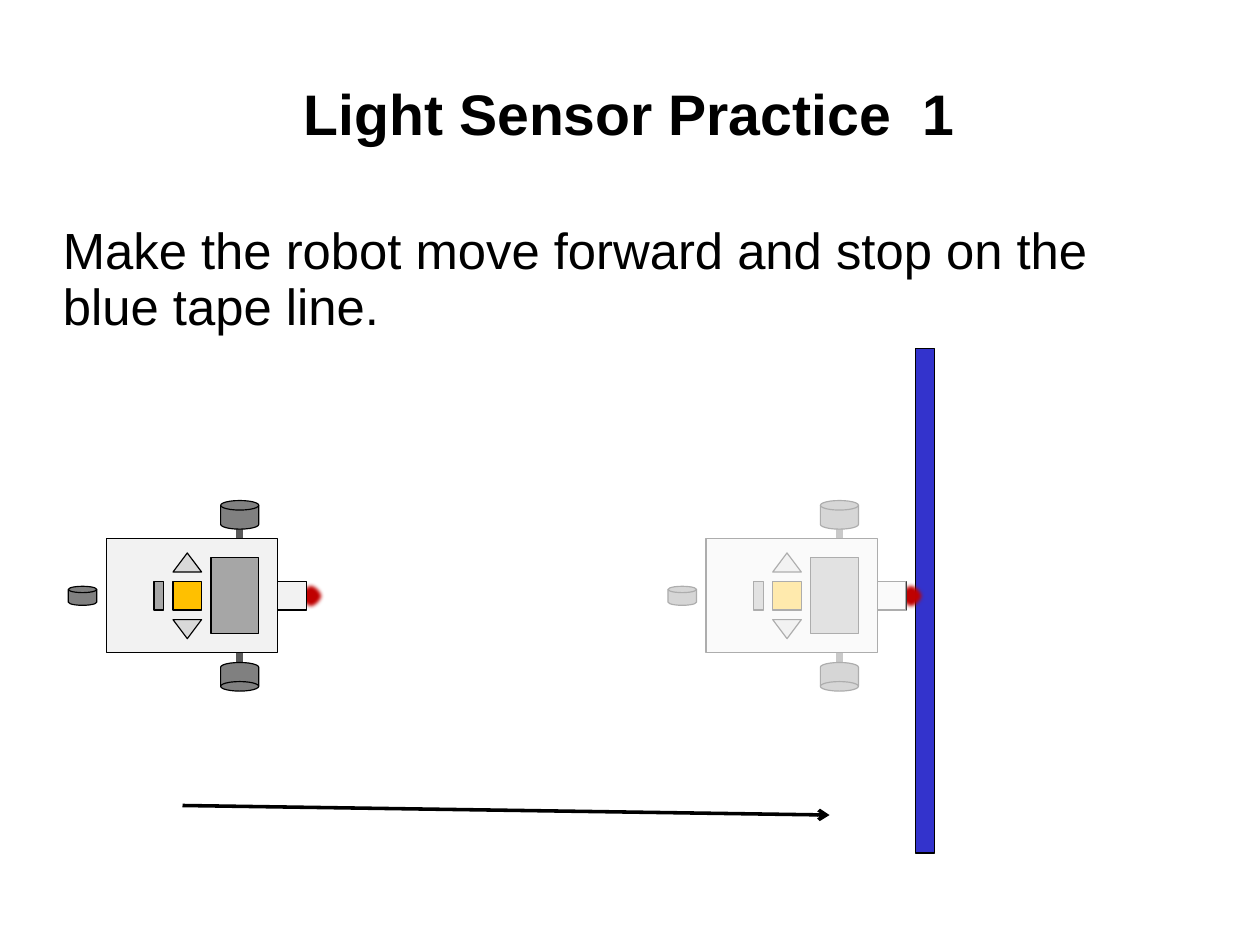
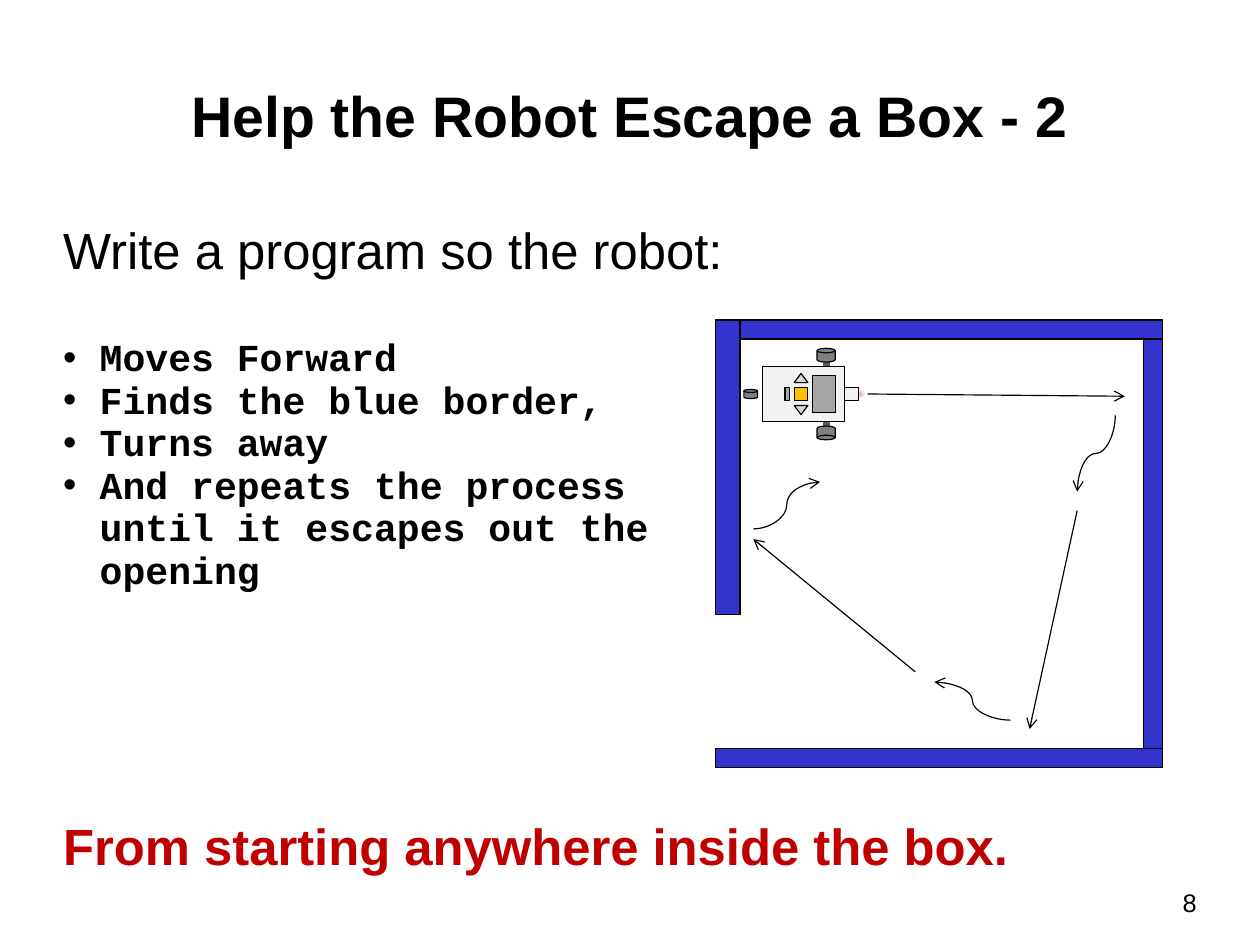
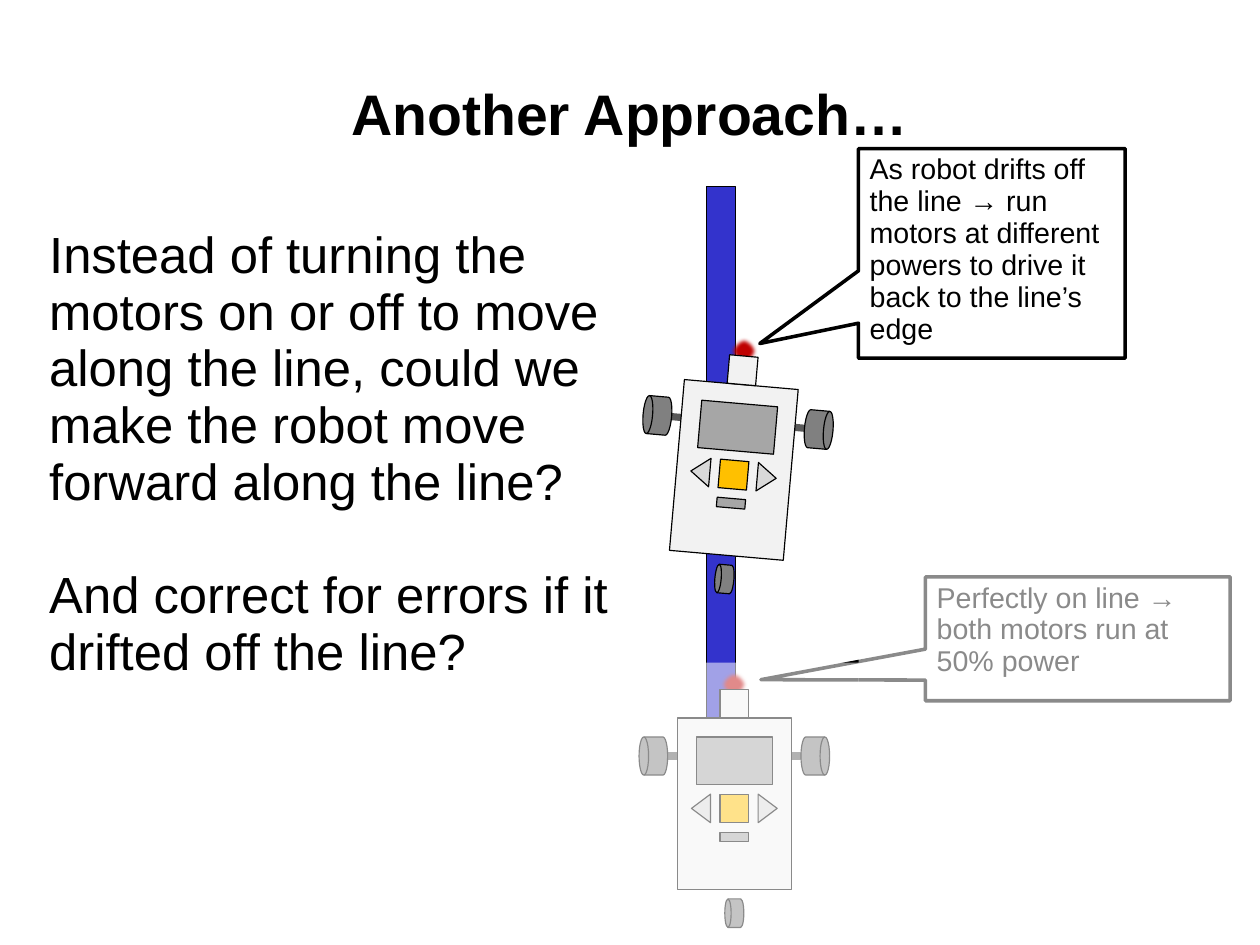
import lxml.etree
import pptx
import pptx.dml.color
import pptx.enum.shapes
import pptx.enum.text
import pptx.oxml.ns
import pptx.util

Pt = pptx.util.Pt
SHAPE = pptx.enum.shapes.MSO_SHAPE
CONNECTOR = pptx.enum.shapes.MSO_CONNECTOR
ALIGN = pptx.enum.text.PP_ALIGN
ANCHOR = pptx.enum.text.MSO_ANCHOR

SLIDE_WIDTH, SLIDE_HEIGHT = 793.75, 595.25
TITLE_BOX = (39.6, 24, 714, 99)
LINE_SPACING = 0.93
BLACK, WHITE, RED, BLUE = "000000", "FFFFFF", "C00000", "3333CC"
PALE, LIGHT, GREY, DARK, AXLE, ORANGE = "F2F2F2", "D9D9D9", "A6A6A6", "808080", "595959", "FFC000"

# Shape, box inside the unscaled robot, fill, rotation
ROBOT_PARTS = [
    (SHAPE.RECTANGLE, (24, 24, 108, 72), PALE, 0),
    (SHAPE.RECTANGLE, (90, 36, 30, 48), GREY, 0),
    (SHAPE.RECTANGLE, (54, 51, 6, 18), GREY, 0),
    (SHAPE.RECTANGLE, (66, 51, 18, 18), ORANGE, 0),
    (SHAPE.ISOSCELES_TRIANGLE, (66, 33, 18, 12), LIGHT, 0),
    (SHAPE.ISOSCELES_TRIANGLE, (66, 75, 18, 12), LIGHT, 180),
    (SHAPE.FLOWCHART_MAGNETIC_DISK, (96, 0, 24, 18), DARK, 0),
    (SHAPE.FLOWCHART_MAGNETIC_DISK, (96, 102, 24, 18), DARK, 180),
    (SHAPE.OVAL, (144, 51, 18, 18), RED, 0),
    (SHAPE.RECTANGLE, (132, 51, 18, 18), PALE, 0),
    (SHAPE.FLOWCHART_MAGNETIC_DISK, (0, 54, 18, 12), DARK, 0),
]


def rgb(value):
    return pptx.dml.color.RGBColor.from_string(value)


def add_xml(parent, tag, **attributes):
    return lxml.etree.SubElement(parent, pptx.oxml.ns.qn(tag), attributes)


def points(values):
    return [Pt(value) for value in values]


def add_shape(shapes, kind, box, fill, line=BLACK, line_width=0.75):
    shape = shapes.add_shape(kind, *points(box))
    shape.shadow.inherit = False
    shape.fill.solid()
    shape.fill.fore_color.rgb = rgb(fill)
    if line:
        shape.line.color.rgb = rgb(line)
        shape.line.width = Pt(line_width)
    else:
        shape.line.fill.background()
    return shape


def add_line(shapes, start, end, color=BLACK, width=0.75, arrow=True,
             kind=CONNECTOR.STRAIGHT, rotation=0):
    connector = shapes.add_connector(kind, *points(start + end))
    connector.line.color.rgb = rgb(color)
    connector.line.width = Pt(width)
    if arrow:
        add_xml(connector.line._get_or_add_ln(), "a:tailEnd", type="arrow")
    add_xml(connector._element.spPr, "a:effectLst")
    if rotation:
        connector.rotation = rotation


def add_tape(shapes, box):
    add_shape(shapes, SHAPE.RECTANGLE, box, BLUE)


def add_veil(shapes, box, opacity):
    """Fade what lies below with a see-through white sheet."""
    veil = add_shape(shapes, SHAPE.RECTANGLE, box, WHITE, line=None)
    color = veil._element.spPr.find(".//" + pptx.oxml.ns.qn("a:srgbClr"))
    add_xml(color, "a:alpha", val=str(opacity * 1000))


def add_robot(slide, left, top, scale=1, rotation=0):
    """Draw the robot heading right, then turn it about its centre."""
    group = slide.shapes.add_group_shape()
    axle_x = left + 108 * scale
    add_line(group.shapes, (axle_x, top + 18 * scale), (axle_x, top + 102 * scale),
             AXLE, 4.5, arrow=False)
    for kind, (x, y, width, height), fill, turn in ROBOT_PARTS:
        box = (left + x * scale, top + y * scale, width * scale, height * scale)
        is_light = kind == SHAPE.OVAL
        part = add_shape(group.shapes, kind, box, fill, None if is_light else BLACK)
        part.rotation = turn
        if is_light:
            effects = part._element.spPr.find(pptx.oxml.ns.qn("a:effectLst"))
            add_xml(effects, "a:softEdge", rad=str(Pt(2.5)))
    group.rotation = rotation


def set_text(shape, paragraphs, size, color=BLACK, bold=False, font="Arial",
             align=ALIGN.LEFT, anchor=ANCHOR.TOP, gap=0):
    frame = shape.text_frame
    frame.word_wrap = True
    frame.auto_size = pptx.enum.text.MSO_AUTO_SIZE.NONE
    frame.vertical_anchor = anchor
    frame.text = "\n".join(paragraphs)
    for index, paragraph in enumerate(frame.paragraphs):
        paragraph.alignment = align
        paragraph.line_spacing = LINE_SPACING
        paragraph.space_before = Pt(gap if index else 0)
        for run in paragraph.runs:
            run.font.name = font
            run.font.size = Pt(size)
            run.font.bold = bold
            run.font.color.rgb = rgb(color)


def set_insets(shape, top=0):
    frame = shape.text_frame
    frame.margin_left = frame.margin_right = frame.margin_bottom = 0
    frame.margin_top = Pt(top)


def add_text(slide, box, paragraphs, size=32, **style):
    text_box = slide.shapes.add_textbox(*points(box))
    set_insets(text_box, top=2)
    set_text(text_box, paragraphs, size, **style)
    return text_box


def add_bullets(slide, box, items):
    text_box = add_text(slide, box, items, 24, bold=True, font="Courier New")
    for paragraph in text_box.text_frame.paragraphs:
        properties = paragraph._p.get_or_add_pPr()
        properties.set("marL", str(Pt(23)))
        properties.set("indent", str(-Pt(23)))
        add_xml(properties, "a:buFont", typeface="Arial")
        add_xml(properties, "a:buChar", char="•")


def add_callout(slide, box, pointer, text):
    callout = add_shape(slide.shapes, SHAPE.RECTANGULAR_CALLOUT, box, WHITE, line_width=2.25)
    for index, value in enumerate(pointer):
        callout.adjustments[index] = value
    set_text(callout, [text], 18)


def add_titled_slide(presentation, text, inset=0):
    slide = presentation.slides.add_slide(presentation.slide_layouts[5])
    title = slide.shapes.title
    title.left, title.top, title.width, title.height = points(TITLE_BOX)
    set_insets(title, inset)
    set_text(title, [text], 36, bold=True, align=ALIGN.CENTER, anchor=ANCHOR.MIDDLE)
    return slide


def add_box_course(slide, left, top):
    """Draw the taped box with its opening, the robot and its route."""
    shapes = slide.shapes
    side, tape = 282, 12
    add_tape(shapes, (left + side - tape, top, tape, side))
    for wall_top in (top, top + side - tape):
        add_tape(shapes, (left, wall_top, side, tape))
    add_tape(shapes, (left, top, 15.6, 185.4))
    add_robot(slide, left + 18, top + 17.8, scale=0.48)

    straight_runs = [((96, 46.6), (258, 48)), ((228, 120), (198, 257.6)), ((126, 221.6), (24, 138))]
    turns = [((216, 72), (264, 96), 90), ((138, 228), (186, 252), 180), ((24, 131.6), (66, 102), 0)]
    runs = [(*run, CONNECTOR.STRAIGHT, 0) for run in straight_runs]
    runs += [(start, end, CONNECTOR.CURVE, turn) for start, end, turn in turns]
    for start, end, kind, rotation in runs:
        add_line(shapes, (left + start[0], top + start[1]), (left + end[0], top + end[1]),
                 kind=kind, rotation=rotation)


def build_practice(presentation):
    slide = add_titled_slide(presentation, "Light Sensor Practice  1")
    add_text(slide, (39.6, 139, 714, 80),
             ["Make the robot move forward and stop on the blue tape line."])
    add_robot(slide, 43, 315.3)
    add_tape(slide.shapes, (576.6, 219.4, 12, 318))
    add_line(slide.shapes, (115, 507.4), (522.6, 513.4), width=2.25)
    add_robot(slide, 420.8, 315.3)
    add_veil(slide.shapes, (409, 304, 162, 138), 68)


def build_escape(presentation):
    slide = add_titled_slide(presentation, "Help the Robot Escape a Box - 2", inset=2)
    add_text(slide, (39.8, 139, 714, 40), ["Write a program so the robot:"])
    add_bullets(slide, (39.8, 210.6, 400, 170), [
        "Moves Forward",
        "Finds the blue border,",
        "Turns away",
        "And repeats the process\vuntil it escapes out the\vopening",
    ])
    add_text(slide, (39.8, 514.6, 714, 40), ["From starting anywhere inside the box."],
             color=RED, bold=True)
    add_box_course(slide, 450.6, 201.6)
    add_text(slide, (569, 558.6, 185, 22), ["8"], 16, align=ALIGN.RIGHT)


def build_line_following(presentation):
    slide = add_titled_slide(presentation, "Another Approach…")
    add_tape(slide.shapes, (445, 117.4, 18.4, 437.8))
    add_robot(slide, 381.6, 443.2, rotation=270)
    add_callout(slide, (583, 363.4, 192, 78), (-1.04, 0.33),
                "Perfectly on line → both motors run at 50% power")
    add_robot(slide, 381.6, 233, rotation=275)
    add_callout(slide, (540.8, 93.6, 168, 132), (-0.87, 0.43),
                "As robot drifts off the line → run motors at different powers "
                "to drive it back to the line’s edge")
    add_veil(slide.shapes, (373, 417.4, 168, 177.8), 54)
    add_veil(slide.shapes, (541, 327.4, 246, 156), 54)
    add_text(slide, (31, 141.6, 363, 392), [
        "Instead of turning the motors on or off to move along the line, "
        "could we make the robot move forward along the line?",
        "And correct for errors if it drifted off the line?",
    ], gap=35.6)


def main():
    presentation = pptx.Presentation()
    presentation.slide_width, presentation.slide_height = points((SLIDE_WIDTH, SLIDE_HEIGHT))
    for build in (build_practice, build_escape, build_line_following):
        build(presentation)
    presentation.save("out.pptx")


if __name__ == "__main__":
    main()
